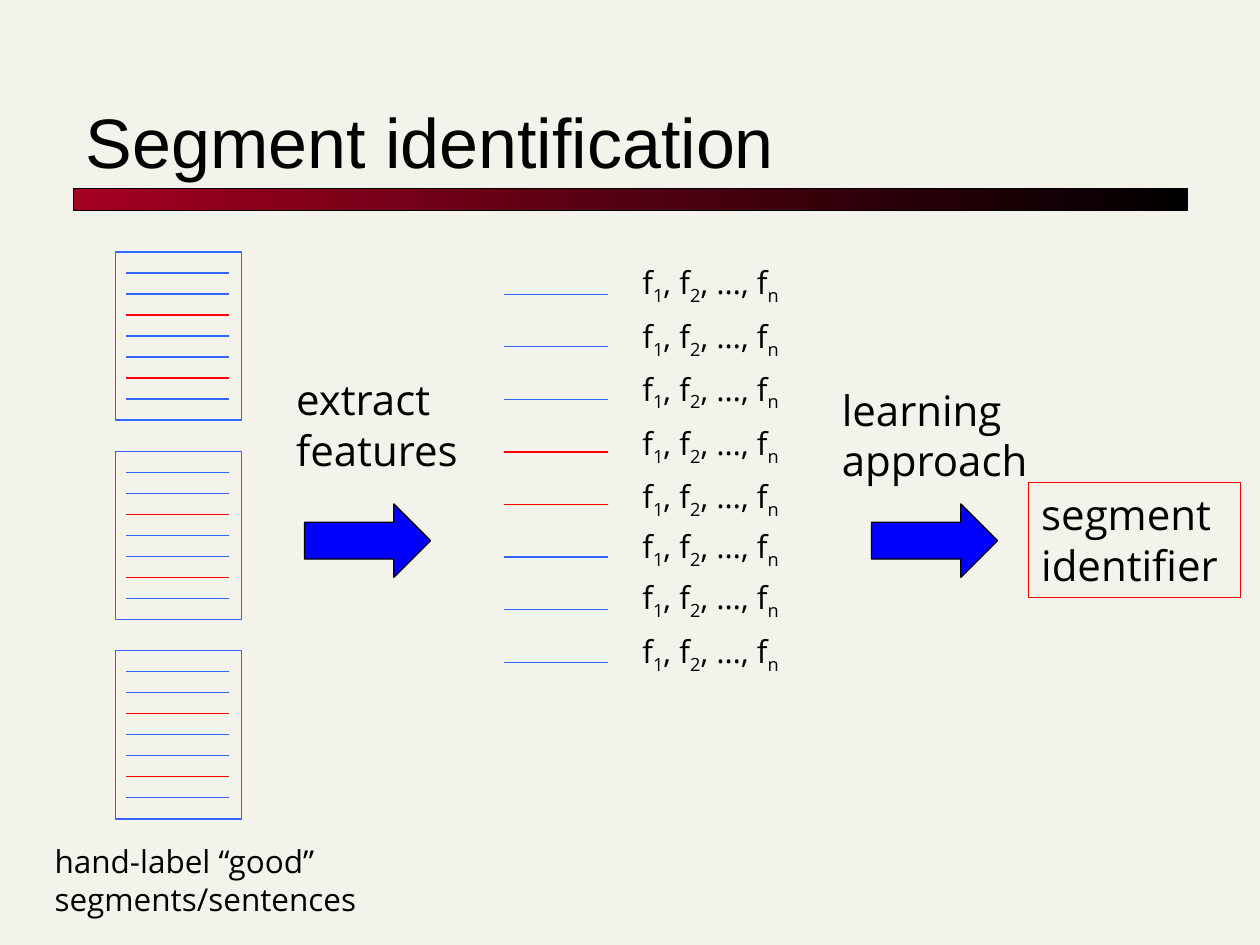
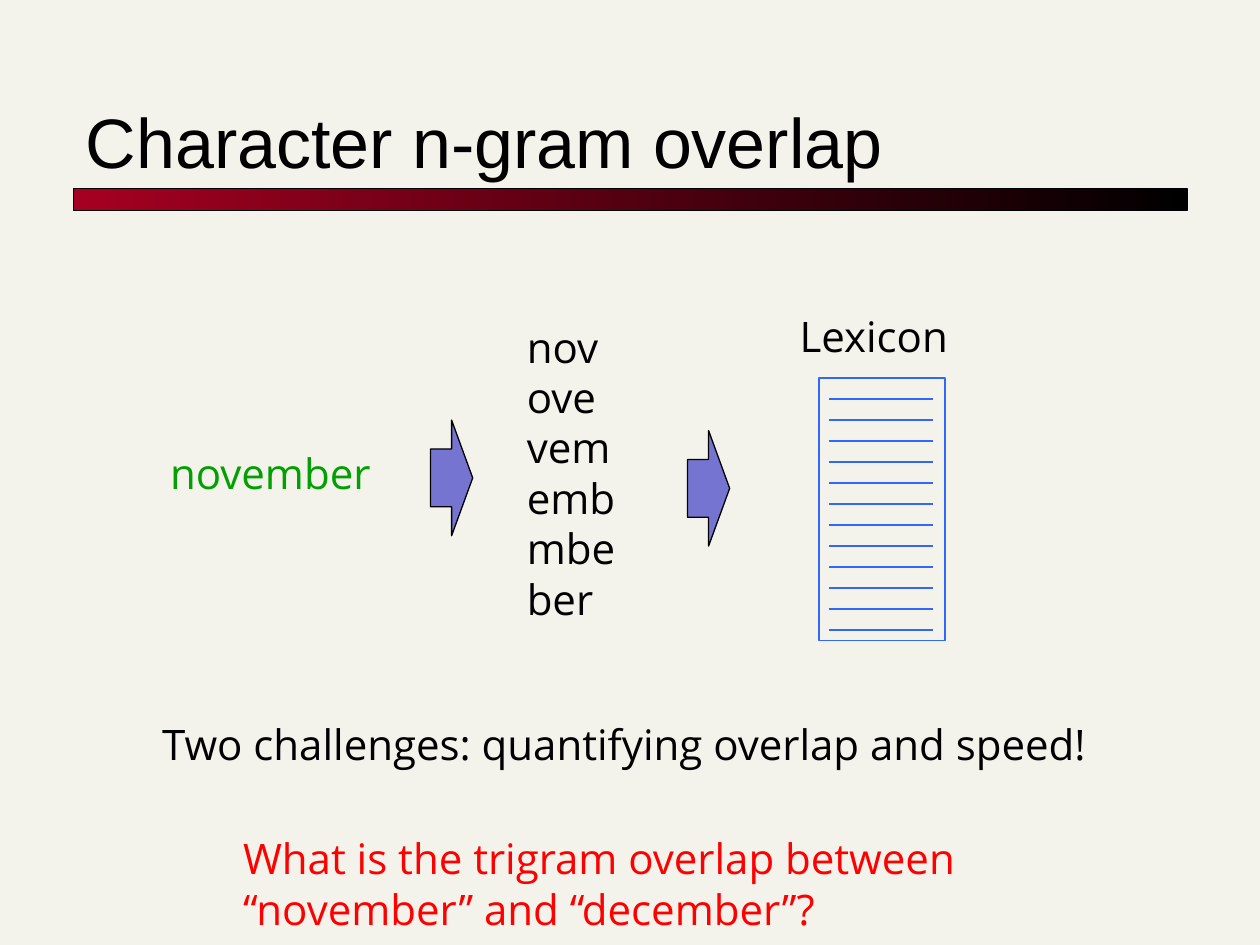
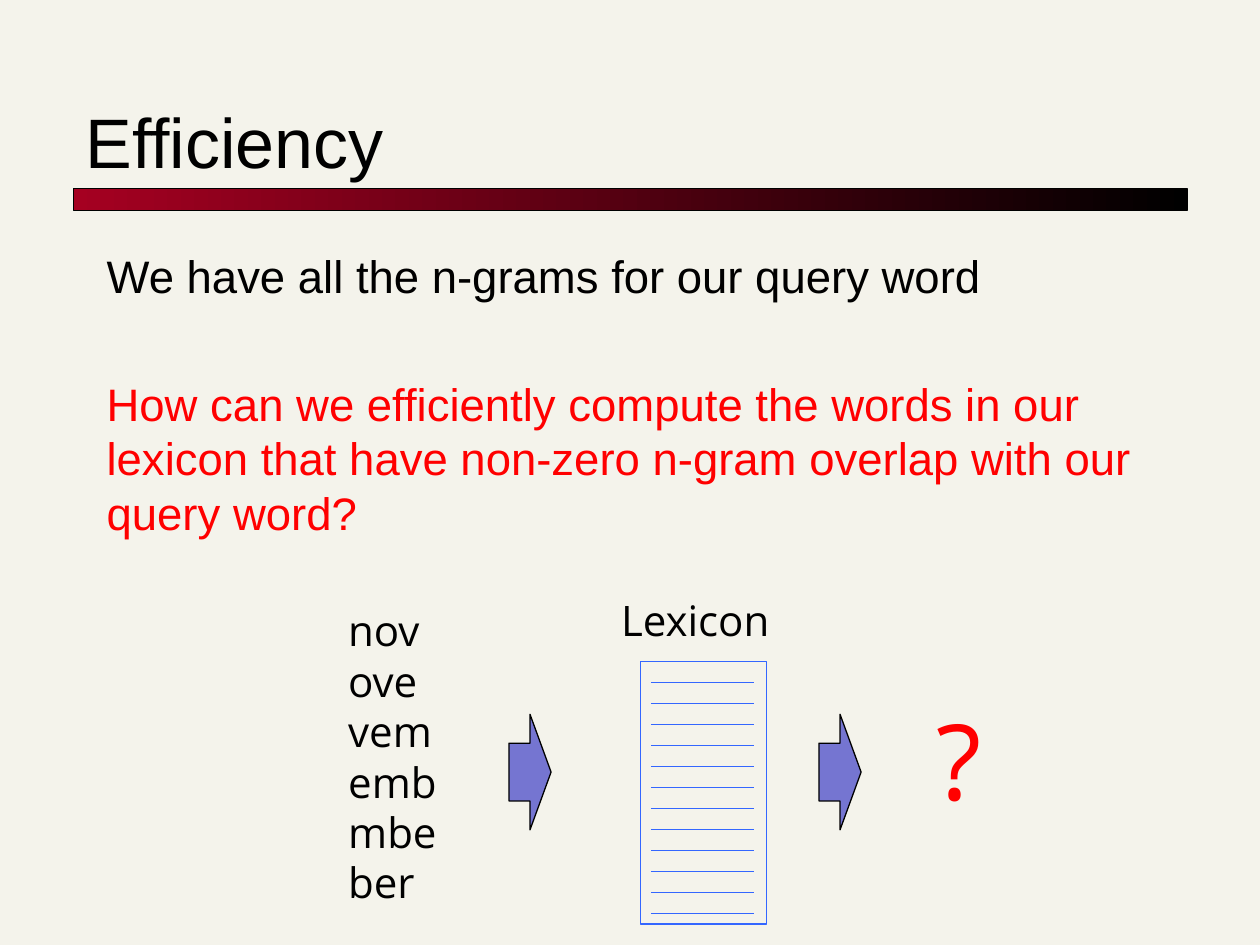
from dataclasses import dataclass

from lxml import etree
from pptx import Presentation
from pptx.dml.color import RGBColor
from pptx.enum.shapes import MSO_CONNECTOR, MSO_SHAPE
from pptx.enum.text import MSO_ANCHOR, MSO_AUTO_SIZE, PP_ALIGN
from pptx.oxml.ns import qn
from pptx.util import Cm, Pt

RECTANGLE, RIGHT_ARROW = MSO_SHAPE.RECTANGLE, MSO_SHAPE.RIGHT_ARROW
STRAIGHT = MSO_CONNECTOR.STRAIGHT
TOP, BOTTOM = MSO_ANCHOR.TOP, MSO_ANCHOR.BOTTOM
LEFT = PP_ALIGN.LEFT
FIXED_SIZE, GROW = MSO_AUTO_SIZE.NONE, MSO_AUTO_SIZE.SHAPE_TO_FIT_TEXT


@dataclass(frozen=True)
class Theme:
    paper: RGBColor = RGBColor.from_string("F4F3EB")
    ink: RGBColor = RGBColor.from_string("000000")
    crimson: RGBColor = RGBColor.from_string("A50021")
    red: RGBColor = RGBColor.from_string("FF0000")
    blue: RGBColor = RGBColor.from_string("3366FF")
    strong_blue: RGBColor = RGBColor.from_string("0000FF")
    violet: RGBColor = RGBColor.from_string("7575D1")
    green: RGBColor = RGBColor.from_string("00A000")
    heading_font: str = "Arial"
    label_font: str = "Open Sans"
    title_size: int = 40
    body_size: int = 26
    label_size: int = 24
    small_size: int = 18
    huge_size: int = 60
    line_height: float = 1.2
    outline: float = 0.75


theme = Theme()


def add_text(slide, at, text, size=theme.label_size, color=theme.ink,
             font=theme.label_font, wrap=False, fit=GROW, anchor=TOP):
    """Add a text box; at is left, top, width and height in centimetres."""
    box = slide.shapes.add_textbox(*map(Cm, at))
    frame = box.text_frame
    frame.text = text
    frame.word_wrap = wrap
    frame.auto_size = fit
    frame.vertical_anchor = anchor
    for paragraph in frame.paragraphs:
        paragraph.alignment = LEFT
        paragraph.line_spacing = Pt(size * theme.line_height)
        for run in paragraph.runs:
            run.font.name = font
            run.font.size = Pt(size)
            run.font.color.rgb = color
    return box


def add_figure(slide, kind, at, line, fill=None):
    """Add an outlined shape; at is left, top, width and height in centimetres."""
    figure = slide.shapes.add_shape(kind, *map(Cm, at))
    figure.shadow.inherit = False
    figure.line.color.rgb = line
    figure.line.width = Pt(theme.outline)
    if fill is None:
        figure.fill.background()
    else:
        figure.fill.solid()
        figure.fill.fore_color.rgb = fill
    return figure


prs = Presentation()
prs.slide_width, prs.slide_height = Cm(25.4), Cm(19.05)
master_fill = prs.slide_master.background.fill
master_fill.solid()
master_fill.fore_color.rgb = theme.paper
blank = prs.slide_layouts[6]

# Title and gradient band of every slide
slides = []
for title in ("Segment identification", "Character n-gram overlap", "Efficiency"):
    slide = prs.slides.add_slide(blank)
    band = add_figure(slide, RECTANGLE, (1.48, 3.8, 22.45, 0.44), theme.ink)
    band.fill.gradient()
    band.fill.gradient_angle = 0
    for stop, color in zip(band.fill.gradient_stops, (theme.crimson, theme.ink)):
        stop.color.rgb = color
    add_text(slide, (1.48, 1.06, 22.43, 2.75), title, theme.title_size,
             font=theme.heading_font, wrap=True, fit=FIXED_SIZE, anchor=BOTTOM)
    slides.append(slide)
segment_slide, overlap_slide, efficiency_slide = slides

# Segment identification: labelled documents, features, learned identifier
PAGE_WIDTH, SENTENCE_WIDTH, SENTENCE_GAP = 2.54, 2.08, 2.54 / 6
DOCUMENT_HEIGHT, LEXICON_HEIGHT = 3.39, 5.29
labelled = [theme.blue, theme.blue, theme.red, theme.blue, theme.blue,
            theme.red, theme.blue]
pages = [(segment_slide, 2.33, 5.08 + 4.02 * i, DOCUMENT_HEIGHT, labelled)
         for i in range(3)]
sentences = []

feature_tops = (5.29, 6.37, 7.43, 8.52, 9.6, 10.61, 11.64, 12.73)
feature_colors = [theme.blue] * 3 + [theme.red] * 2 + [theme.blue] * 3
for row, (top, color) in enumerate(zip(feature_tops, feature_colors)):
    sentences.append((segment_slide, 10.17, 5.93 + 1.06 * row, color))
    features = add_text(segment_slide, (12.7, top, 3.89, 1.02), "f", theme.small_size)
    paragraph = features.text_frame.paragraphs[0]
    for i, piece in enumerate(("1", ", f", "2", ", …, f", "n")):
        run = paragraph.add_run()
        run.text = piece
        run.font.name = theme.label_font
        run.font.size = Pt(theme.small_size)
        run.font.color.rgb = theme.ink
        if i % 2 == 0:
            run._r.get_or_add_rPr().set("baseline", "-25000")

for left in (6.14, 17.57):
    add_figure(segment_slide, RIGHT_ARROW, (left, 10.16, 2.54, 1.48),
               theme.ink, theme.strong_blue)
add_text(segment_slide, (5.72, 7.41, 3.89, 2.31), "extract\vfeatures")
add_text(segment_slide, (16.72, 7.62, 4.37, 2.31), "learning\napproach")
identifier = add_text(segment_slide, (20.74, 9.73, 4.27, 2.31), "segment\videntifier")
identifier.line.color.rgb = theme.red
identifier.line.width = Pt(theme.outline)
add_text(segment_slide, (0.85, 16.85, 6.93, 1.8),
         "hand-label “good”\nsegments/sentences", theme.small_size)

# Trigrams looked up in the lexicon, on both n-gram slides
violet_arrows = [(overlap_slide, 8.68, 8.47), (efficiency_slide, 16.51, 14.4)]
for slide, left, top in ((overlap_slide, 10.37, 6.35), (efficiency_slide, 6.77, 12.07)):
    add_text(slide, (left, top, 2.34, 6.4), "nov\nove\nvem\nemb\nmbe\nber")
    add_text(slide, (left + 5.5, top - 0.21, 3.71, 1.27), "Lexicon")
    pages.append((slide, left + 6.14, top + 1.27, LEXICON_HEIGHT, [theme.blue] * 12))
    violet_arrows.append((slide, left + 3.49, top + 2.33))

for slide, left, top in violet_arrows:
    add_figure(slide, RIGHT_ARROW, (left, top, 0.85, 2.33), theme.ink, theme.violet)

# Pages and the sentences on them
for slide, left, top, height, colors in pages:
    add_figure(slide, RECTANGLE, (left, top, PAGE_WIDTH, height), theme.blue)
    for row, color in enumerate(colors, start=1):
        sentences.append((slide, left + 0.21, top + SENTENCE_GAP * row, color))

for slide, left, top, color in sentences:
    sentence = slide.shapes.add_connector(
        STRAIGHT, Cm(left), Cm(top), Cm(left + SENTENCE_WIDTH), Cm(top))
    sentence.line.color.rgb = color
    sentence.line.width = Pt(theme.outline)
    etree.SubElement(sentence._element.spPr, qn("a:effectLst"))

# Character n-gram overlap: query word and questions
add_text(overlap_slide, (3.18, 8.89, 4.65, 1.27), "november", color=theme.green)
add_text(overlap_slide, (4.65, 16.66, 17.78, 2.31),
         "What is the trigram overlap between “november” and “december”?",
         color=theme.red, wrap=True)
add_text(overlap_slide, (3.02, 14.35, 20.29, 1.27),
         "Two challenges: quantifying overlap and speed!")

# Efficiency: statement, question and unknown result
body = add_text(
    efficiency_slide, (1.9, 4.88, 21.59, 9.32),
    "We have all the n-grams for our query word\n"
    "How can we efficiently compute the words in our lexicon that have "
    "non-zero n-gram overlap with our query word?",
    theme.body_size, font=theme.heading_font, wrap=True, fit=FIXED_SIZE)
statement, question = body.text_frame.paragraphs
statement.space_before = Pt(5.2)
question.space_before = Pt(41.5)
question.runs[0].font.color.rgb = theme.red
add_text(efficiency_slide, (18.62, 13.89, 1.42, 2.82), "?", theme.huge_size, theme.red)

prs.save("out.pptx")
